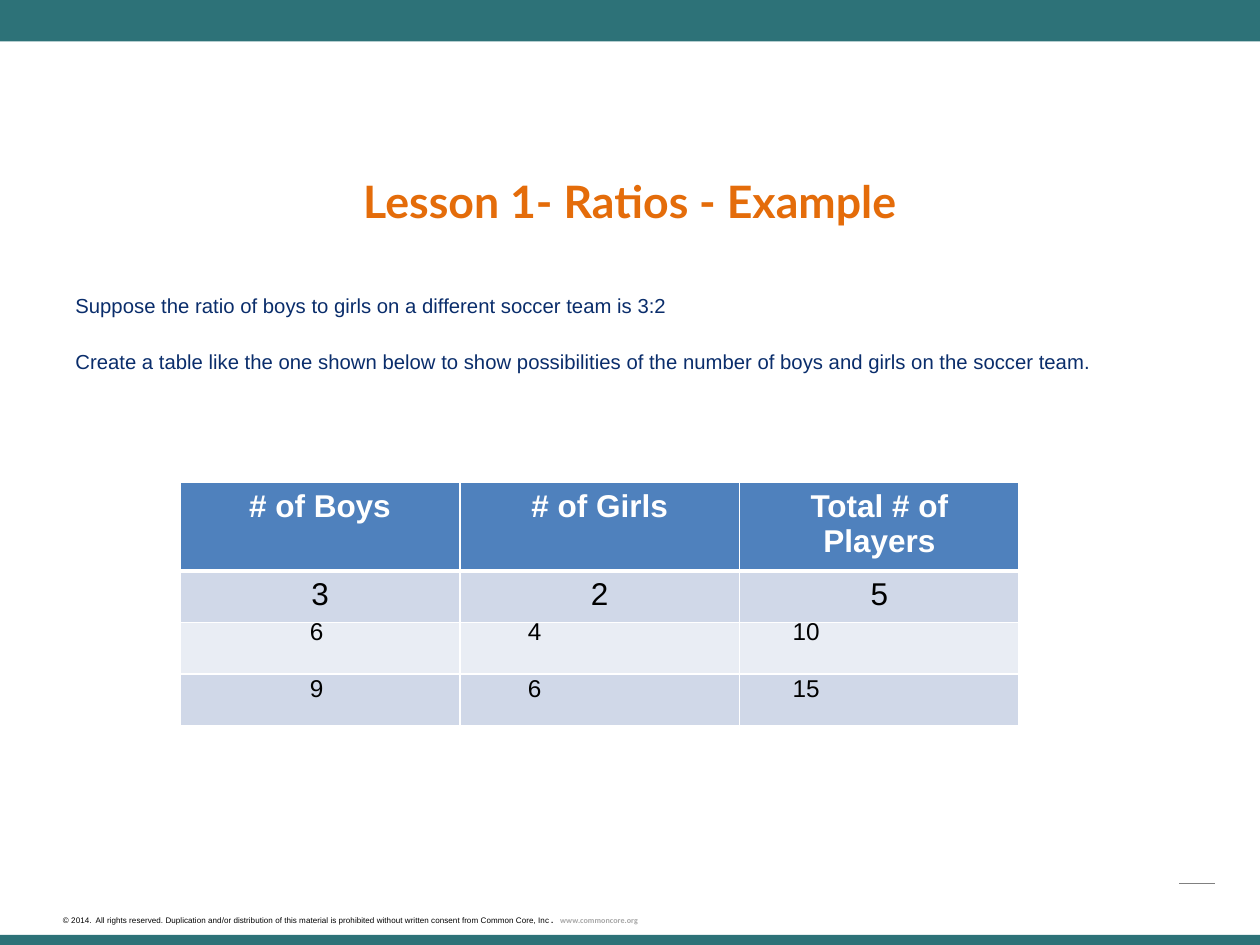
from lxml.etree import SubElement
from pptx import Presentation
from pptx.dml.color import RGBColor
from pptx.enum.shapes import MSO_CONNECTOR, MSO_SHAPE
from pptx.enum.text import MSO_ANCHOR, MSO_AUTO_SIZE, PP_ALIGN
from pptx.oxml.ns import qn
from pptx.util import Emu, Inches, Pt

WHITE, BLACK, TEAL = "FFFFFF", "000000", "2D7278"
HEADER = ["# of Boys", "# of Girls", "Total # of Players"]
FIRST_ROW = ["3", "2", "5"]
ANSWERS = [["6", "4", "10"], ["9", "6", "15"]]
ROW_FILLS = ["4F81BD", "D0D8E8", "E9EDF4", "D0D8E8"]
TASK = [
    "Suppose the ratio of boys to girls on a different soccer team is 3:2",
    "Create a table like the one shown below to show possibilities of the "
    "number of boys and girls on the soccer team.",
]
COPYRIGHT = ("© 2014.  All rights reserved. Duplication and/or distribution of this "
             "material is prohibited without written consent from Common Core, Inc")


def rgb(value):
    return RGBColor.from_string(value)


def add_run(p, text, color, lowered=True, **font):
    """Add a run; a lowered one is set as a 25 % subscript."""
    r = p.add_run()
    r.text = text
    r.font.color.rgb = rgb(color)
    for name, value in font.items():
        setattr(r.font, name, value)
    if lowered:
        r.font._element.set("baseline", "-25000")


def add_text_box(s, x, y, w, h, inset=None):
    tf = s.shapes.add_textbox(Inches(x), Inches(y), Inches(w), Inches(h)).text_frame
    tf.word_wrap = True
    if inset is not None:
        for side in ("left", "top", "right", "bottom"):
            setattr(tf, f"margin_{side}", Inches(inset))
    return tf


def add_bar(s, y, h):
    bar = s.shapes.add_shape(MSO_SHAPE.RECTANGLE, 0, Inches(y), Inches(10), Inches(h))
    bar.shadow.inherit = False
    bar.fill.solid()
    bar.fill.fore_color.rgb = rgb(TEAL)
    bar.line.fill.background()


def add_rule(s, x1, x2, y):
    line = s.shapes.add_connector(MSO_CONNECTOR.STRAIGHT, Inches(x1), Inches(y),
                                  Inches(x2), Inches(y))
    line.line.color.rgb = rgb("808080")
    line.line.width = Pt(0.5)
    SubElement(line._element.spPr, qn("a:effectLst"))


def set_title(s, text):
    title = s.shapes.title
    title.left, title.top, title.width, title.height = map(Inches, (0.5, 0.92, 9, 0.9))
    tf = title.text_frame
    tf.vertical_anchor = MSO_ANCHOR.TOP
    tf.auto_size = MSO_AUTO_SIZE.NONE
    p = tf.paragraphs[0]
    p.alignment = PP_ALIGN.CENTER
    add_run(p, text, "E46C0A", name="Lato", size=Pt(44), bold=True)


def add_task(s):
    tf = add_text_box(s, 0.5, 2.09, 9, 4.4)
    for i, text in enumerate(TASK):
        p = tf.add_paragraph() if i else tf.paragraphs[0]
        pPr = p._p.get_or_add_pPr()
        pPr.set("marL", str(Inches(0.38)))
        pPr.set("indent", str(-Inches(0.38)))
        if i:
            p.space_before = Pt(5)
        add_run(p, text, "0A2D6B", name="Arial", size=Pt(20))


def set_borders(cell, bottom):
    tcPr = cell._tc.get_or_add_tcPr()
    fill = tcPr[0]
    for side, width in (("L", 1), ("R", 1), ("T", 1), ("B", bottom)):
        ln = SubElement(tcPr, qn(f"a:ln{side}"), w=str(Pt(width)))
        SubElement(SubElement(ln, qn("a:solidFill")), qn("a:srgbClr"), val=WHITE)
        fill.addprevious(ln)


def add_ratio_table(s):
    rows, cols = len(ROW_FILLS), len(HEADER)
    table = s.shapes.add_table(rows, cols, Inches(1.43), Inches(3.83),
                               Emu(Inches(2.22) * cols), Emu(Inches(0.41) * rows)).table
    for r, color in enumerate(ROW_FILLS):
        for c in range(cols):
            cell = table.cell(r, c)
            cell.fill.solid()
            cell.fill.fore_color.rgb = rgb(color)
            set_borders(cell, 1 if r else 3)
    for r, texts in enumerate((HEADER, FIRST_ROW)):
        for c, text in enumerate(texts):
            p = table.cell(r, c).text_frame.paragraphs[0]
            p.alignment = PP_ALIGN.CENTER
            add_run(p, text, BLACK if r else WHITE, lowered=False,
                    name="Arial", size=Pt(18), bold=r == 0)


def add_answers(s):
    """Lay each answer row over the table, with a tab stop per column."""
    for i, values in enumerate(ANSWERS):
        tf = add_text_box(s, 1.99, 4.62 + 0.45 * i, 5.86, 0.37)
        tf.margin_left = Inches(0.47)
        p = tf.paragraphs[0]
        tabs = SubElement(p._p.get_or_add_pPr(), qn("a:tabLst"))
        for stop in (1.73, 3.83):
            SubElement(tabs, qn("a:tab"), pos=str(Inches(stop)), algn="l")
        add_run(p, "\t".join(values), BLACK, name="Arial", size=Pt(24))


def add_footer(s):
    p = add_text_box(s, 0.5, 7.19, 6.04, 0.13, inset=0).paragraphs[0]
    add_run(p, COPYRIGHT, BLACK, name="Arial", size=Pt(8))
    add_run(p, ".   ", BLACK, name="Arial", size=Pt(8), bold=True)
    add_run(p, "www.commoncore.org", "A6A6A6", name="Calibri", size=Pt(8), bold=True)


def main():
    prs = Presentation()
    prs.slide_width, prs.slide_height = Inches(10), Inches(7.5)
    s = prs.slides.add_slide(prs.slide_layouts[5])
    add_bar(s, 0, 0.33)
    add_bar(s, 7.42, 0.08)
    add_rule(s, 9.36, 9.64, 7.01)
    add_footer(s)
    add_ratio_table(s)
    add_answers(s)
    set_title(s, "Lesson 1- Ratios - Example")
    add_task(s)
    prs.save("out.pptx")


if __name__ == "__main__":
    main()
